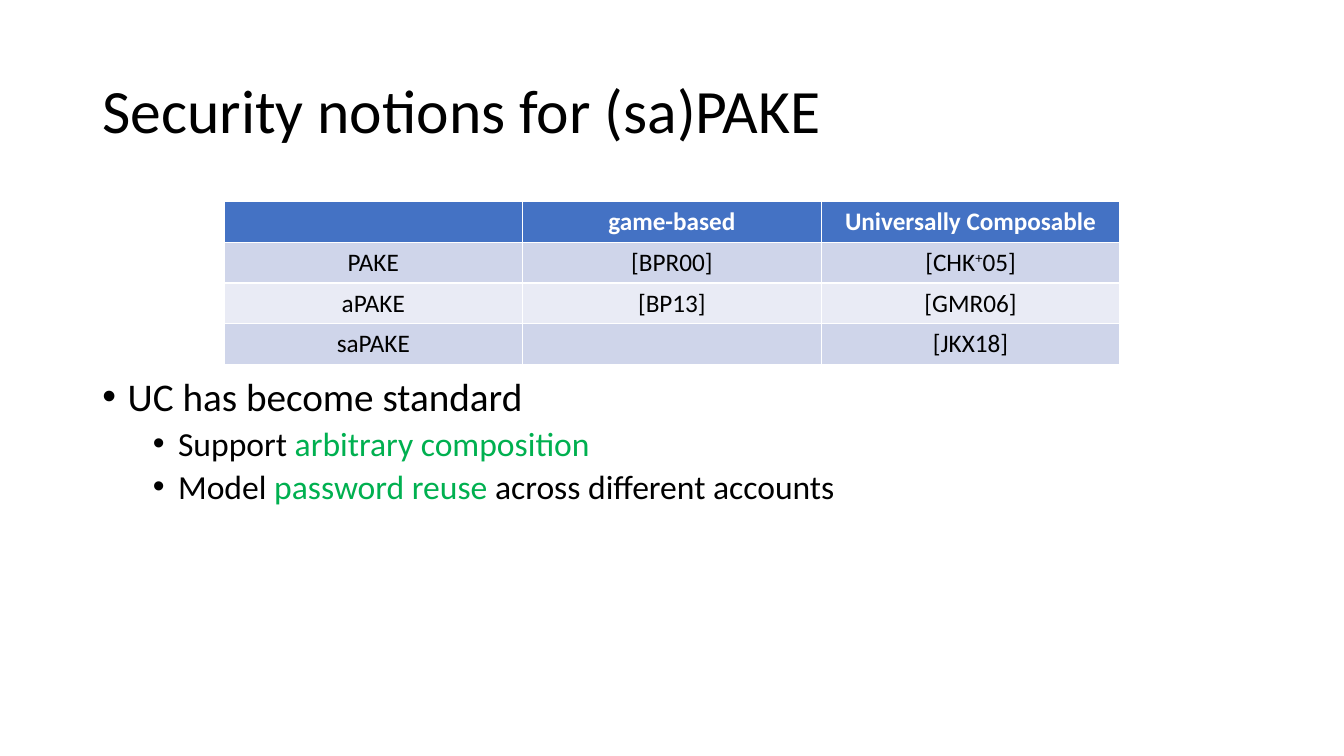
"""Build the slide on security notions for (sa)PAKE."""
from lxml.etree import SubElement
from pptx import Presentation
from pptx.dml.color import RGBColor
from pptx.enum.text import MSO_ANCHOR, MSO_AUTO_SIZE, PP_ALIGN
from pptx.oxml.ns import qn
from pptx.util import Pt

COLORS = {
    "text": "000000",
    "accent": "00B050",
    "header": "4472C4",
    "header_text": "FFFFFF",
    "odd": "CFD5EA",
    "even": "E9EBF5",
}
FONT = "Calibri"
ROWS = [
    ["", "game-based", "Universally Composable"],
    ["PAKE", "[BPR00]", "[CHK^+^05]"],
    ["aPAKE", "[BP13]", "[GMR06]"],
    ["saPAKE", "", "[JKX18]"],
]
BULLETS = [
    (0, "UC has become standard"),
    (1, "Support *arbitrary composition*"),
    (1, "Model *password reuse* across different accounts"),
]
LEVELS = [
    {"size": 28, "left": 18, "before": 0},
    {"size": 24, "left": 54, "before": 5},
]


def rgb(name):
    return RGBColor.from_string(COLORS[name])


def add_run(p, text, size, color="text", bold=False):
    r = p.add_run()
    r.text = text
    r.font.name = FONT
    r.font.size = Pt(size)
    r.font.bold = bold
    r.font.color.rgb = rgb(color)
    return r


def place(sp, left, top, width, height):
    sp.left, sp.top, sp.width, sp.height = map(Pt, (left, top, width, height))
    sp.text_frame.word_wrap = True
    sp.text_frame.auto_size = MSO_AUTO_SIZE.NONE


def fill_title(sp, text):
    place(sp, 66, 28.75, 828, 104.38)
    tf = sp.text_frame
    tf.vertical_anchor = MSO_ANCHOR.MIDDLE
    p = tf.paragraphs[0]
    p.alignment = PP_ALIGN.LEFT
    p.line_spacing = 0.9
    add_run(p, text, 44)


def add_bullet(p, level, text):
    style = LEVELS[level]
    p.level = level
    p.line_spacing = 0.9
    p.space_before = Pt(style["before"])
    pPr = p._p.get_or_add_pPr()
    pPr.set("marL", str(Pt(style["left"])))
    pPr.set("indent", str(Pt(-18)))
    SubElement(pPr, qn("a:buFont")).set("typeface", "Arial")
    SubElement(pPr, qn("a:buChar")).set("char", "•")
    for i, part in enumerate(text.split("*")):
        if part:
            add_run(p, part, style["size"], "accent" if i % 2 else "text")


def fill_body(sp, bullets):
    place(sp, 66, 143.75, 828, 342.62)
    tf = sp.text_frame
    tf.margin_top = Pt(126)
    for i, (level, text) in enumerate(bullets):
        p = tf.add_paragraph() if i else tf.paragraphs[0]
        add_bullet(p, level, text)


def fill_cell(cell, text, header, fill):
    cell.fill.solid()
    cell.fill.fore_color.rgb = rgb(fill)
    p = cell.text_frame.paragraphs[0]
    p.alignment = PP_ALIGN.CENTER
    for i, part in enumerate(text.split("^")):
        if part:
            r = add_run(p, part, 18, "header_text" if header else "text", header)
            if i % 2:
                r._r.get_or_add_rPr().set("baseline", "30000")


def add_notions_table(s, rows):
    frame = s.shapes.add_table(
        len(rows), len(rows[0]), Pt(160), Pt(143.75), Pt(640), Pt(116.8)
    )
    for i, row in enumerate(rows):
        fill = "header" if i == 0 else "odd" if i % 2 else "even"
        for j, text in enumerate(row):
            fill_cell(frame.table.cell(i, j), text, i == 0, fill)


def main():
    prs = Presentation()
    prs.slide_width, prs.slide_height = Pt(960), Pt(540)
    s = prs.slides.add_slide(prs.slide_layouts[1])
    fill_title(s.shapes.title, "Security notions for (sa)PAKE")
    fill_body(s.placeholders[1], BULLETS)
    add_notions_table(s, ROWS)
    prs.save("out.pptx")


if __name__ == "__main__":
    main()
